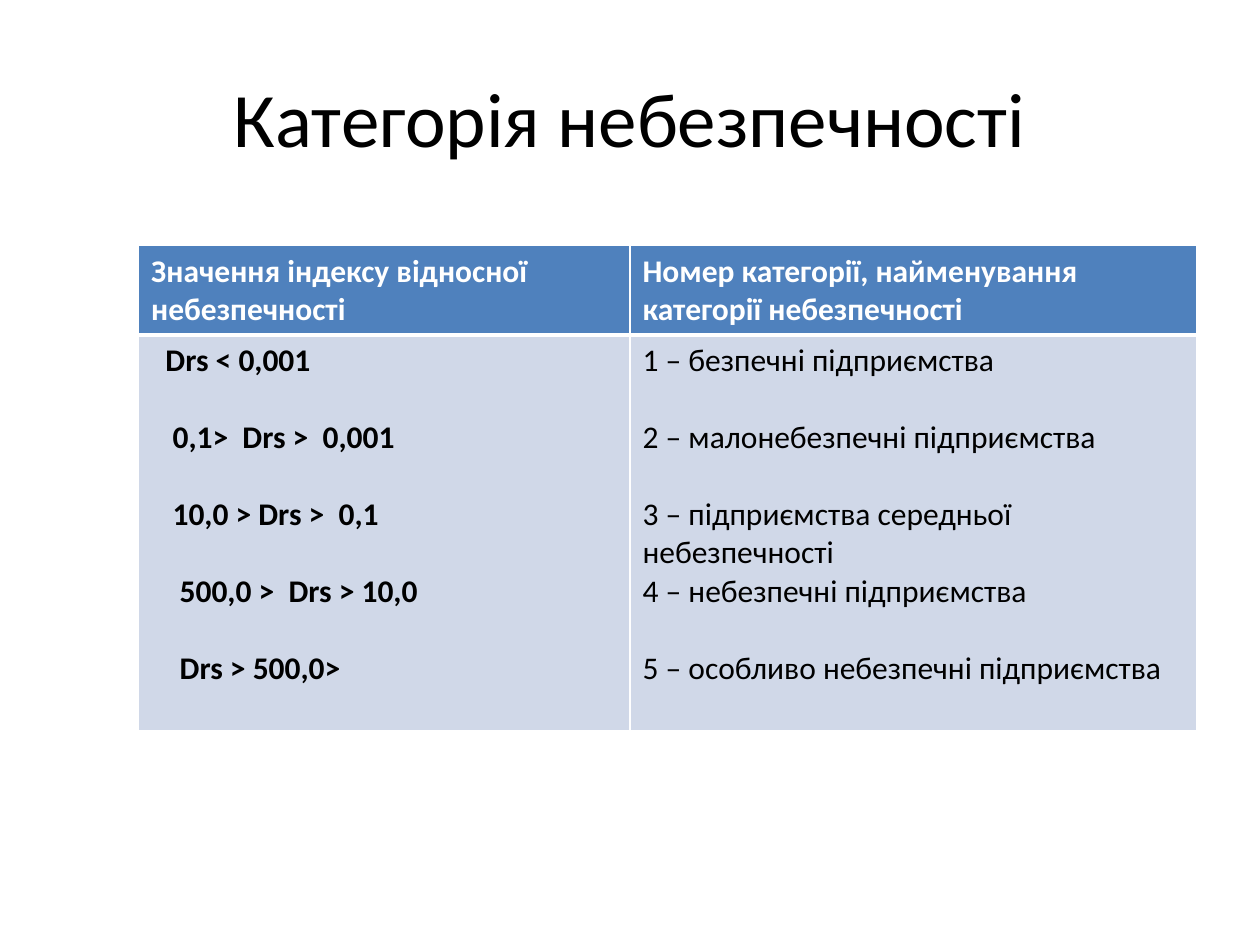
import lxml.etree
import pptx
import pptx.dml.color
import pptx.enum.text
import pptx.oxml.ns
import pptx.util

HEADINGS = [
    "Значення індексу відносної небезпечності",
    "Номер категорії, найменування категорії небезпечності",
]
CATEGORIES = [
    ("Drs < 0,001", 2, "1 – безпечні підприємства"),
    ("0,1>  Drs >  0,001", 3, "2 – малонебезпечні підприємства"),
    ("10,0 > Drs >  0,1", 3, "3 – підприємства середньої небезпечності"),
    ("500,0 >  Drs > 10,0", 4, "4 – небезпечні підприємства"),
    ("Drs > 500,0>", 4, "5 – особливо небезпечні підприємства"),
]
WRAPPED_ITEM = 2
LINE = 22
INDENT_STEP = 4.07


def color(value):
    return pptx.dml.color.RGBColor.from_string(value)


class SlideBuilder:
    """Holds the style and the current slide and adds each kind of element."""

    font = "Calibri"
    ink, paper = "000000", "FFFFFF"
    header_fill, body_fill = "4F81BD", "D0D8E8"
    title_size, table_size = 44, 18

    def __init__(self, presentation):
        self.width = presentation.slide_width
        self.height = presentation.slide_height
        self.slide = presentation.slides.add_slide(presentation.slide_layouts[6])

    def box(self, left, top, width, height):
        return (int(left * self.width), int(top * self.height),
                int(width * self.width), int(height * self.height))

    def format_runs(self, paragraph, size, ink, bold=False):
        for run in paragraph.runs:
            run.font.name = self.font
            run.font.size = pptx.util.Pt(size)
            run.font.bold = bold
            run.font.color.rgb = color(ink)

    def title(self, text, *area):
        shape = self.slide.shapes.add_textbox(*self.box(*area))
        frame = shape.text_frame
        frame.word_wrap = True
        frame.vertical_anchor = pptx.enum.text.MSO_ANCHOR.MIDDLE
        frame.text = text
        paragraph = frame.paragraphs[0]
        paragraph.alignment = pptx.enum.text.PP_ALIGN.CENTER
        self.format_runs(paragraph, self.title_size, self.ink)

    def borders(self, cell, top, bottom):
        properties = cell._tc.get_or_add_tcPr()
        widths = {"lnL": 1, "lnR": 1, "lnT": top, "lnB": bottom}
        for index, (side, width) in enumerate(widths.items()):
            line = lxml.etree.Element(pptx.oxml.ns.qn(f"a:{side}"), w=str(pptx.util.Pt(width)))
            fill = lxml.etree.SubElement(line, pptx.oxml.ns.qn("a:solidFill"))
            lxml.etree.SubElement(fill, pptx.oxml.ns.qn("a:srgbClr"), val=self.paper)
            properties.insert(index, line)

    def cell(self, cell, lines, fill, ink, bold, top, bottom):
        cell.fill.solid()
        cell.fill.fore_color.rgb = color(fill)
        self.borders(cell, top, bottom)
        cell.text_frame.text = "\n".join(text for text, _, _ in lines)
        for paragraph, (_, indent, gap) in zip(cell.text_frame.paragraphs, lines):
            paragraph.space_after = pptx.util.Pt(gap)
            if indent:
                margin = pptx.util.Pt(indent * INDENT_STEP)
                paragraph._p.get_or_add_pPr().set("marL", str(margin))
            self.format_runs(paragraph, self.table_size, ink, bold)

    def table(self, headings, columns, column_shares, row_shares, left, top):
        area = self.box(left, top, sum(column_shares), sum(row_shares))
        table = self.slide.shapes.add_table(2, len(headings), *area).table
        table.horz_banding = False
        for column, share in zip(table.columns, column_shares):
            column.width = int(share * self.width)
        for row, share in zip(table.rows, row_shares):
            row.height = int(share * self.height)
        for index, (heading, lines) in enumerate(zip(headings, columns)):
            self.cell(table.cell(0, index), [(heading, 0, 0)],
                      self.header_fill, self.paper, True, 1, 3)
            self.cell(table.cell(1, index), lines,
                      self.body_fill, self.ink, index == 0, 3, 1)


def main():
    presentation = pptx.Presentation()
    presentation.slide_width = pptx.util.Inches(10)
    presentation.slide_height = pptx.util.Inches(7.5)
    builder = SlideBuilder(presentation)
    builder.title("Категорія небезпечності", 0.05, 0.04, 0.9, 1 / 6)
    ranges = [(value, indent, LINE) for value, indent, _ in CATEGORIES]
    names = [(name, 0, 0 if index == WRAPPED_ITEM else LINE)
             for index, (_, _, name) in enumerate(CATEGORIES)]
    builder.table(HEADINGS, [ranges, names], [0.39, 0.45],
                  [0.71 / 7.5, 3.14 / 7.5], 0.11, 0.26)
    presentation.save("out.pptx")


if __name__ == "__main__":
    main()
